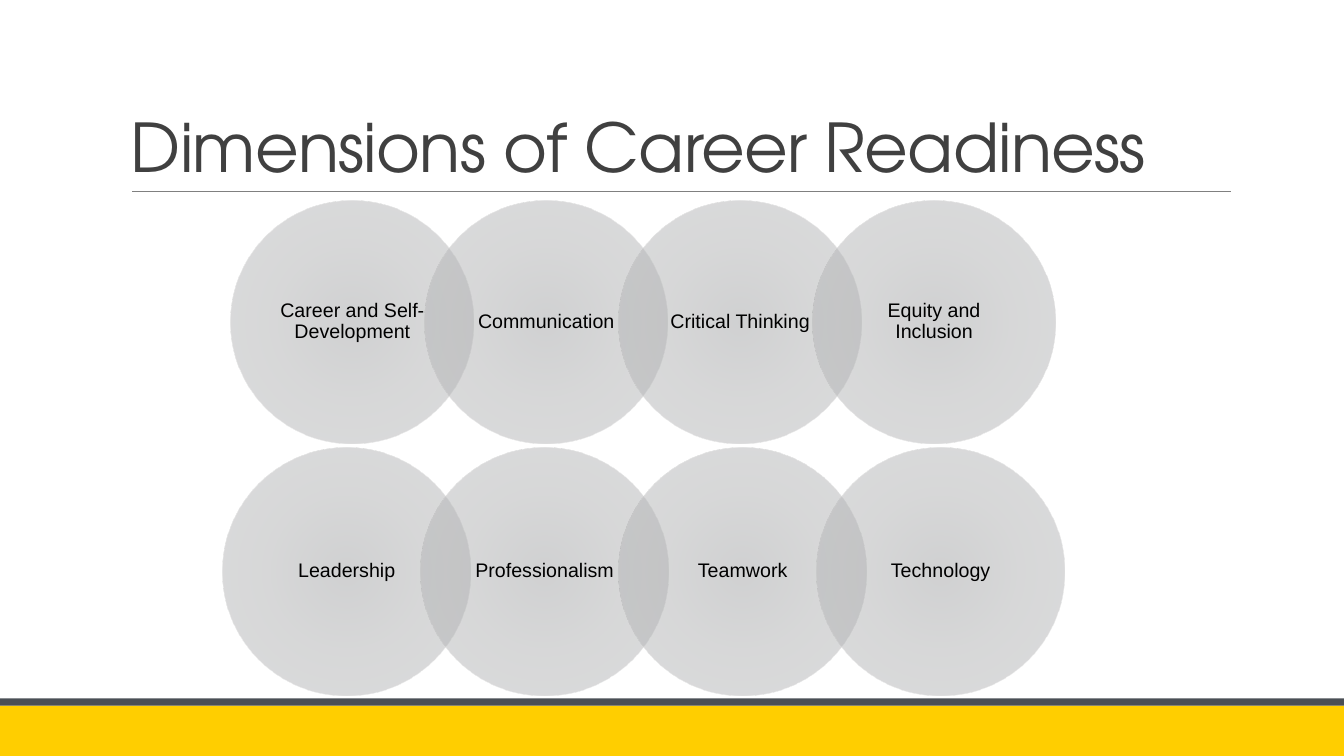
from dataclasses import dataclass
from typing import Any

from lxml.etree import SubElement
from pptx import Presentation
from pptx.dml.color import RGBColor
from pptx.enum.shapes import MSO_CONNECTOR as Link, MSO_SHAPE as Kind
from pptx.enum.text import MSO_ANCHOR as Anchor, PP_ALIGN as Align
from pptx.oxml.ns import qn
from pptx.util import Inches, Pt

YELLOW = RGBColor(0xFF, 0xCE, 0x00)
SLATE = RGBColor(0x4A, 0x4F, 0x55)
GRAY = RGBColor(0x80, 0x80, 0x80)
DARK = RGBColor(0x40, 0x40, 0x40)
BLACK = RGBColor(0x00, 0x00, 0x00)
INNER = RGBColor(0xA3, 0xA4, 0xA6)
MIDDLE = RGBColor(0xB1, 0xB2, 0xB3)
OUTER = RGBColor(0xB9, 0xBA, 0xBC)
STOPS = ((0, INNER), (45, MIDDLE), (100, OUTER))


@dataclass(frozen=True)
class Band:
    top: float
    height: float
    color: RGBColor


@dataclass(frozen=True)
class Row:
    first: float
    last: float
    top: float
    size: float
    inset: float
    labels: tuple[str, ...]


BANDS = (Band(7, 0.5, YELLOW), Band(6.93, 0.07, SLATE))
ROWS = (
    Row(2.29, 8.06, 1.99, 2.41, 0.13,
        ("Career and Self-Development", "Communication",
         "Critical Thinking", "Equity and Inclusion")),
    Row(2.21, 8.1, 4.44, 2.46, 0.14,
        ("Leadership", "Professionalism", "Teamwork", "Technology")),
)
TITLE_FONT = {"name": "TeX Gyre Adventor", "size": Pt(48)}
LABEL_FONT = {"name": "Arial", "size": Pt(14)}


def apply(item: Any, values: dict[str, Any]) -> None:
    for name, value in values.items():
        setattr(item, name, value)


def write(shape: Any, text: str, font: dict[str, Any], color: RGBColor,
          frame: dict[str, Any], para: dict[str, Any]) -> Any:
    body = shape.text_frame
    apply(body, {"word_wrap": True, **frame})
    line = body.paragraphs[0]
    apply(line, para)
    run = line.add_run()
    run.text = text
    apply(run.font, font)
    run.font.color.rgb = color
    return run


def add_plain(slide: Any, kind: Kind, left: float, top: float,
              width: float, height: float) -> Any:
    shape = slide.shapes.add_shape(
        kind, Inches(left), Inches(top), Inches(width), Inches(height))
    shape.shadow.inherit = False
    shape.line.fill.background()
    return shape


def add_band(slide: Any, band: Band) -> None:
    shape = add_plain(slide, Kind.RECTANGLE, 0, band.top, 13.33, band.height)
    shape.fill.solid()
    shape.fill.fore_color.rgb = band.color


def add_rule(slide: Any) -> None:
    rule = slide.shapes.add_connector(
        Link.STRAIGHT, Inches(1.31), Inches(1.9), Inches(12.21), Inches(1.9))
    rule.line.color.rgb = GRAY
    rule.line.width = Pt(0.5)
    SubElement(rule._element.spPr, qn("a:effectLst"))


def add_title(slide: Any) -> None:
    box = slide.shapes.add_textbox(
        Inches(1.2), Inches(0.31), Inches(11), Inches(1.59))
    run = write(box, "Dimensions of Career Readiness", TITLE_FONT, DARK,
                {"vertical_anchor": Anchor.BOTTOM}, {"line_spacing": 0.85})
    run.font._element.set("spc", "-50")


def shade(shape: Any) -> None:
    shape.fill.gradient()
    grad = shape._element.spPr.find(qn("a:gradFill"))
    for child in list(grad):
        grad.remove(child)
    stops = SubElement(grad, qn("a:gsLst"))
    for place, color in STOPS:
        stop = SubElement(stops, qn("a:gs"), pos=str(place * 1000))
        tint = SubElement(stop, qn("a:srgbClr"), val=str(color))
        SubElement(tint, qn("a:alpha"), val="50000")
    route = SubElement(grad, qn("a:path"), {"path": "circle"})
    SubElement(route, qn("a:fillToRect"), dict.fromkeys("ltrb", "100000"))


def add_row(slide: Any, row: Row) -> None:
    step = (row.last - row.first) / (len(row.labels) - 1)
    side, edge = Inches(row.inset), Inches(0.02)
    frame = {"vertical_anchor": Anchor.MIDDLE,
             "margin_left": side, "margin_right": side,
             "margin_top": edge, "margin_bottom": edge}
    para = {"alignment": Align.CENTER, "line_spacing": 0.9}
    for index, label in enumerate(row.labels):
        disc = add_plain(slide, Kind.OVAL, row.first + index * step,
                         row.top, row.size, row.size)
        shade(disc)
        write(disc, label, LABEL_FONT, BLACK, frame, para)


def main() -> None:
    deck = Presentation()
    apply(deck, {"slide_width": Inches(13.33), "slide_height": Inches(7.5)})
    slide = deck.slides.add_slide(deck.slide_layouts[6])
    for band in BANDS:
        add_band(slide, band)
    add_rule(slide)
    add_title(slide)
    for row in ROWS:
        add_row(slide, row)
    deck.save("out.pptx")


if __name__ == "__main__":
    main()
